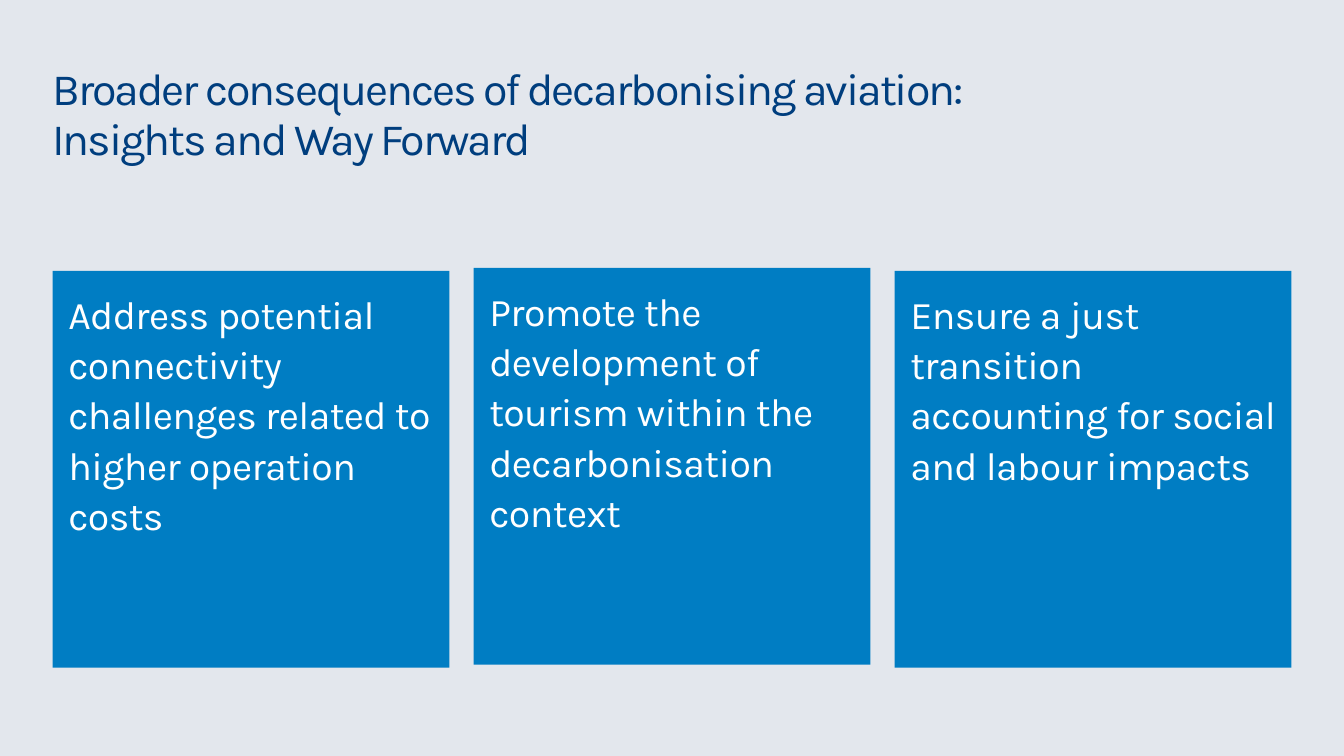
from dataclasses import dataclass

from pptx import Presentation
from pptx.dml.color import RGBColor
from pptx.enum.shapes import MSO_SHAPE
from pptx.enum.text import MSO_ANCHOR, MSO_AUTO_SIZE, PP_ALIGN
from pptx.util import Emu, Pt

RECT = MSO_SHAPE.RECTANGLE
TOP = MSO_ANCHOR.TOP
LEFT = PP_ALIGN.LEFT
FIXED = MSO_AUTO_SIZE.NONE


@dataclass(frozen=True)
class Theme:
    back: RGBColor = RGBColor(0xE3, 0xE7, 0xED)
    navy: RGBColor = RGBColor(0x00, 0x3E, 0x7E)
    blue: RGBColor = RGBColor(0x00, 0x7D, 0xC3)
    white: RGBColor = RGBColor(0xFF, 0xFF, 0xFF)
    font: str = "Karla"
    head: int = 32
    body: int = 28
    line: int = 36


THEME = Theme()
TITLE = ["Broader consequences of decarbonising aviation:",
         "Insights and Way Forward"]
CARDS = [
    ("Address potential connectivity challenges related to higher operation costs", 0),
    ("Promote the development of tourism within the decarbonisation context", -3),
    ("Ensure a just transition accounting for social and labour impacts", 0),
]


def px(n):
    return Emu(n * 9525)


def write(shape, lines, size, color, track, after, pad):
    frame = shape.text_frame
    frame.word_wrap = True
    frame.auto_size = FIXED
    frame.vertical_anchor = TOP
    frame.margin_left = frame.margin_top = frame.margin_right = px(pad)
    frame.margin_bottom = 0
    para = frame.paragraphs[0]
    para.alignment = LEFT
    para.line_spacing = Pt(THEME.line)
    para.space_before = 0
    para.space_after = Pt(after)
    for i, line in enumerate(lines):
        if i:
            para.add_line_break()
        run = para.add_run()
        run.text = line
        run.font.name = THEME.font
        run.font.size = Pt(size)
        run.font.color.rgb = color
        run.font._element.set("spc", str(track))


def add_title(slide, box):
    title = slide.shapes.title
    title.left, title.top, title.width, title.height = map(px, box)
    write(title, TITLE, THEME.head, THEME.navy, -150, 36, 0)


def add_card(slide, box, text):
    card = slide.shapes.add_shape(RECT, *map(px, box))
    card.shadow.inherit = False
    card.fill.solid()
    card.fill.fore_color.rgb = THEME.blue
    card.line.fill.background()
    write(card, [text], THEME.body, THEME.white, -40, 24, 15)


def add_cards(slide, box):
    x, y, width, side = box
    step = (width - side) // (len(CARDS) - 1)
    for i, (text, shift) in enumerate(CARDS):
        add_card(slide, (x + i * step, y + shift, side, side), text)


def main():
    deck = Presentation()
    deck.slide_width, deck.slide_height = px(1280), px(720)
    slide = deck.slides.add_slide(deck.slide_layouts[5])
    slide.background.fill.solid()
    slide.background.fill.fore_color.rgb = THEME.back
    add_title(slide, (50, 61, 1179, 80))
    add_cards(slide, (50, 258, 1180, 378))
    deck.save("out.pptx")


if __name__ == "__main__":
    main()
